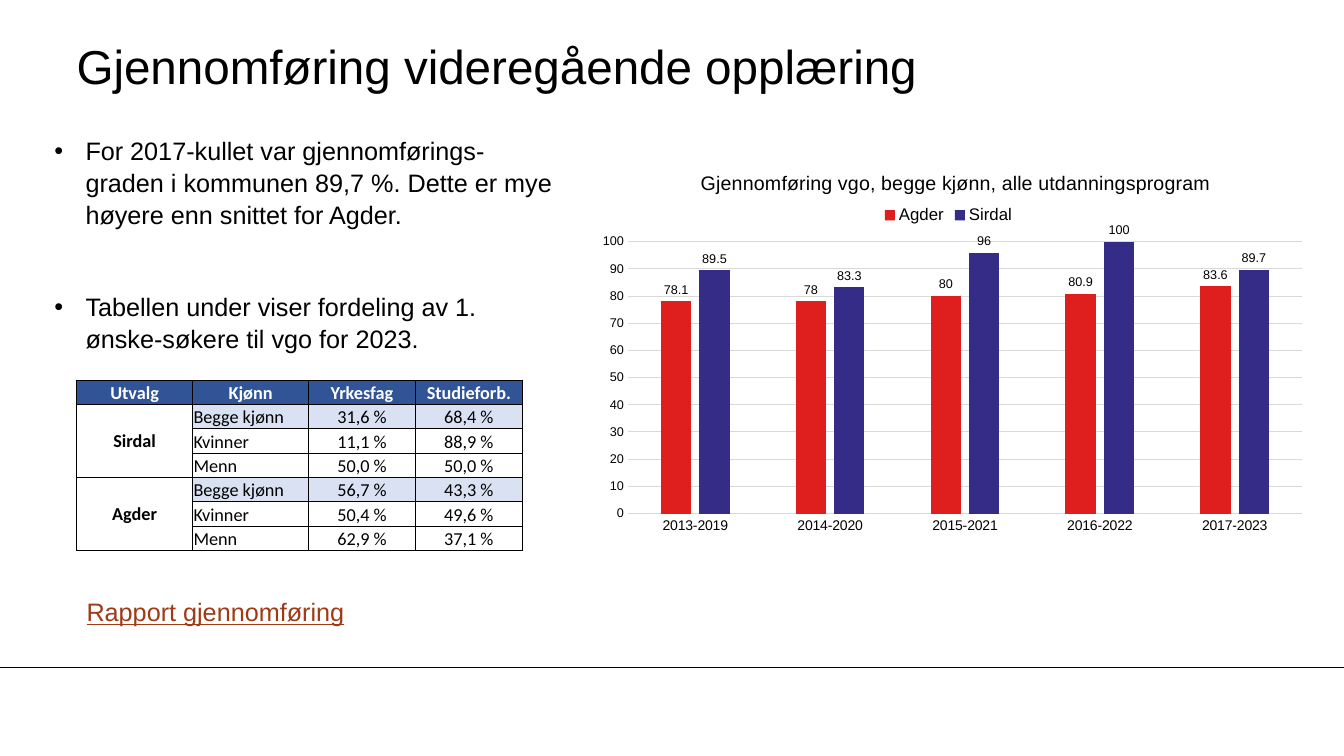
from lxml import etree
from pptx import Presentation
from pptx.chart.data import CategoryChartData
from pptx.dml.color import RGBColor
from pptx.enum.chart import XL_CHART_TYPE, XL_LABEL_POSITION, XL_LEGEND_POSITION, XL_TICK_MARK
from pptx.enum.shapes import MSO_CONNECTOR
from pptx.enum.text import MSO_ANCHOR as ANCHOR, PP_ALIGN as ALIGN
from pptx.oxml.ns import qn
from pptx.util import Pt

BLACK = RGBColor(0x00, 0x00, 0x00)
WHITE = RGBColor(0xFF, 0xFF, 0xFF)
NAVY = RGBColor(0x30, 0x54, 0x96)
PALE = RGBColor(0xD9, 0xE1, 0xF2)
LINK = RGBColor(0x9F, 0x3A, 0x14)
GRID = RGBColor(0xD9, 0xD9, 0xD9)
RED = RGBColor(0xDF, 0x1F, 0x1D)
INDIGO = RGBColor(0x34, 0x2C, 0x86)

PX = 9144  # 100 px to the inch
SLIDE_W, SLIDE_H = 1333, 750

BULLETS = [
    "For 2017-kullet var gjennomførings-graden i kommunen 89,7 %. "
    "Dette er mye høyere enn snittet for Agder.",
    "Tabellen under viser fordeling av 1. ønske-søkere til vgo for 2023.",
]
HEADER = ["Utvalg", "Kjønn", "Yrkesfag", "Studieforb."]
GROUPS = {
    "Sirdal": [("Begge kjønn", "31,6 %", "68,4 %"),
               ("Kvinner", "11,1 %", "88,9 %"),
               ("Menn", "50,0 %", "50,0 %")],
    "Agder": [("Begge kjønn", "56,7 %", "43,3 %"),
              ("Kvinner", "50,4 %", "49,6 %"),
              ("Menn", "62,9 %", "37,1 %")],
}
COL_WIDTHS = [115, 115, 106, 106]
PERIODS = ["2013-2019", "2014-2020", "2015-2021", "2016-2022", "2017-2023"]
SERIES = {
    "Agder": ([78.1, 78, 80, 80.9, 83.6], RED),
    "Sirdal": ([89.5, 83.3, 96, 100, 89.7], INDIGO),
}


def emu(*lengths):
    return [n * PX for n in lengths]


def style(font, size, color=BLACK, name="Arial", bold=False, underline=None):
    font.size, font.name, font.bold = Pt(size), name, bold
    font.color.rgb = color
    if underline:
        font.underline = True


def write(p, text, align=ALIGN.LEFT, **fmt):
    p.alignment = align
    r = p.add_run()
    r.text = text
    style(r.font, **fmt)


def add_text_frame(s, box):
    tf = s.shapes.add_textbox(*emu(*box)).text_frame
    tf.word_wrap = True
    return tf


def add_title(s, box, text):
    tf = add_text_frame(s, box)
    tf.margin_left = tf.margin_top = tf.margin_right = tf.margin_bottom = 0
    tf.vertical_anchor = ANCHOR.MIDDLE
    write(tf.paragraphs[0], text, size=34)


def add_bullets(s, box, items):
    tf = add_text_frame(s, box)
    for i, item in enumerate(items):
        p = tf.add_paragraph() if i else tf.paragraphs[0]
        pPr = p._p.get_or_add_pPr()
        pPr.set("marL", str(31 * PX))
        pPr.set("indent", str(-31 * PX))
        etree.SubElement(pPr, qn("a:buFont")).set("typeface", "Arial")
        etree.SubElement(pPr, qn("a:buChar")).set("char", "•")
        p.line_spacing = 1.05
        if i:
            p.space_before = Pt(43.5)
        write(p, item, size=18)


def add_link_label(s, box, text):
    write(add_text_frame(s, box).paragraphs[0], text, size=18, color=LINK, underline=True)


def add_footer_rule(s, y):
    rule = s.shapes.add_connector(MSO_CONNECTOR.STRAIGHT, *emu(0, y, SLIDE_W, y))
    rule.line.color.rgb = BLACK
    rule.line.width = Pt(0.75)
    etree.SubElement(rule._element.spPr, qn("a:effectLst"))


def set_borders(cell):
    tcPr = cell._tc.get_or_add_tcPr()
    for i, side in enumerate(("a:lnL", "a:lnR", "a:lnT", "a:lnB")):
        ln = etree.Element(qn(side), w=str(Pt(0.5)))
        fill = etree.SubElement(ln, qn("a:solidFill"))
        etree.SubElement(fill, qn("a:srgbClr")).set("val", str(BLACK))
        tcPr.insert(i, ln)


def fill_cell(cell, text, fill, align=ALIGN.CENTER, anchor=ANCHOR.BOTTOM, **fmt):
    cell.margin_left = cell.margin_top = cell.margin_right = PX
    cell.margin_bottom = 0
    cell.vertical_anchor = anchor
    cell.fill.solid()
    cell.fill.fore_color.rgb = fill
    set_borders(cell)
    write(cell.text_frame.paragraphs[0], text, align, size=13, name="Calibri", **fmt)


def add_applicant_table(s, box):
    n_rows = 1 + sum(len(rows) for rows in GROUPS.values())
    table = s.shapes.add_table(n_rows, len(HEADER), *emu(*box)).table
    for col, width in zip(table.columns, COL_WIDTHS):
        col.width = width * PX
    for row in table.rows:
        row.height = box[3] * PX // n_rows
    for c, text in enumerate(HEADER):
        fill_cell(table.cell(0, c), text, NAVY, color=WHITE, bold=True)
    top = 1
    for group, rows in GROUPS.items():
        for i, values in enumerate(rows):
            fill_cell(table.cell(top + i, 0), "" if i else group, WHITE,
                      anchor=ANCHOR.MIDDLE, bold=True)
            for c, text in enumerate(values, 1):
                fill_cell(table.cell(top + i, c), text, WHITE if i else PALE,
                          ALIGN.LEFT if c == 1 else ALIGN.CENTER)
        table.cell(top, 0).merge(table.cell(top + len(rows) - 1, 0))
        top += len(rows)


def place_chart_part(element, index, **fractions):
    """Give a chart part a fixed place, in fractions of the chart's box."""
    layout = element.find(qn("c:layout"))
    if layout is None:
        layout = etree.Element(qn("c:layout"))
        element.insert(index, layout)
    manual = etree.SubElement(layout, qn("c:manualLayout"))
    if "w" in fractions:
        etree.SubElement(manual, qn("c:layoutTarget")).set("val", "inner")
    for mode in ("xMode", "yMode"):
        etree.SubElement(manual, qn("c:" + mode)).set("val", "edge")
    for key, value in fractions.items():
        etree.SubElement(manual, qn("c:" + key)).set("val", str(value))


def add_completion_chart(s, box, title):
    data = CategoryChartData()
    data.categories = PERIODS
    for name, (values, _) in SERIES.items():
        data.add_series(name, values)
    chart = s.shapes.add_chart(XL_CHART_TYPE.COLUMN_CLUSTERED, *emu(*box), data).chart
    style(chart.font, 10)
    chart.has_title = True
    write(chart.chart_title.text_frame.paragraphs[0], title, ALIGN.CENTER, size=14)
    chart.has_legend = True
    chart.legend.position = XL_LEGEND_POSITION.TOP
    chart.legend.include_in_layout = False
    style(chart.legend.font, 12)

    plot = chart.plots[0]
    plot.vary_by_categories = False
    plot.gap_width, plot.overlap = 219, -27
    for series, (_, color) in zip(plot.series, SERIES.values()):
        series.format.fill.solid()
        series.format.fill.fore_color.rgb = color
        labels = series.data_labels
        labels.show_value = True
        labels.position = XL_LABEL_POSITION.OUTSIDE_END
        style(labels.font, 9)

    cat, val = chart.category_axis, chart.value_axis
    for axis, size in ((cat, 10), (val, 9)):
        axis.major_tick_mark = axis.minor_tick_mark = XL_TICK_MARK.NONE
        style(axis.tick_labels.font, size)
    val.minimum_scale, val.maximum_scale, val.major_unit = 0, 100, 10
    val.tick_labels.number_format = "#,##0"
    val.tick_labels.number_format_is_linked = False
    val.format.line.fill.background()
    for line in (cat.format.line, val.major_gridlines.format.line):
        line.color.rgb = GRID
        line.width = Pt(0.75)

    place_chart_part(chart.chart_title._element, 1, x=0.15, y=0.05)
    place_chart_part(chart.legend._element, 1, x=0.4, y=0.14)
    place_chart_part(chart._chartSpace.chart.plotArea, 0, x=0.055, y=0.24, w=0.925, h=0.69)


def main():
    prs = Presentation()
    prs.slide_width, prs.slide_height = emu(SLIDE_W, SLIDE_H)
    s = prs.slides.add_slide(prs.slide_layouts[6])
    add_footer_rule(s, 662)
    add_title(s, (76, 27, 1110, 75), "Gjennomføring videregående opplæring")
    add_bullets(s, (44, 128, 517, 222), BULLETS)
    add_applicant_table(s, (76, 377, 442, 169))
    add_link_label(s, (76, 587, 281, 40), "Rapport gjennomføring")
    add_completion_chart(s, (583, 146, 723, 391),
                         "Gjennomføring vgo, begge kjønn, alle utdanningsprogram")
    prs.save("out.pptx")


if __name__ == "__main__":
    main()
